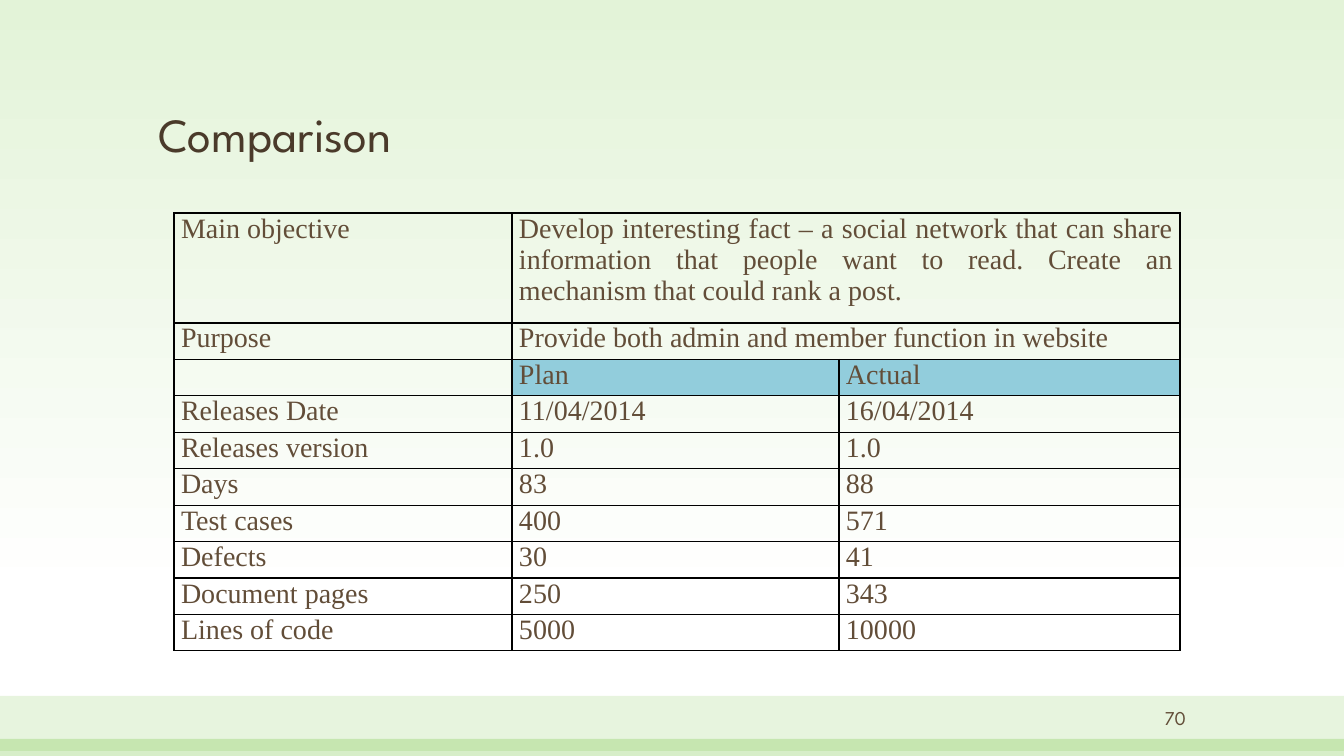
from lxml import etree
from pptx import Presentation
from pptx.dml.color import RGBColor
from pptx.enum.shapes import MSO_SHAPE
from pptx.enum.text import MSO_ANCHOR, PP_ALIGN
from pptx.oxml import parse_xml
from pptx.oxml.ns import nsdecls, qn
from pptx.util import Pt

RECTANGLE = MSO_SHAPE.RECTANGLE
LEFT, RIGHT, JUSTIFY = PP_ALIGN.LEFT, PP_ALIGN.RIGHT, PP_ALIGN.JUSTIFY
MIDDLE, BOTTOM = MSO_ANCHOR.MIDDLE, MSO_ANCHOR.BOTTOM
TITLE_ONLY = 5
SLIDE_WIDTH, SLIDE_HEIGHT = 1344, 756
SCALE = 12192000 / SLIDE_WIDTH

COLORS = {
    "sky": "E3F3D8",
    "white": "FFFFFF",
    "green": "72C23C",
    "title": "4A3A2A",
    "text": "624D38",
    "heading": "92CDDC",
    "border": "000000",
}
HEADING_FONT = "League Spartan"
TABLE_FONT = "Times New Roman"

COLUMN_WIDTHS = [338, 327, 341]
FIRST_ROW_HEIGHT, OTHER_ROWS_HEIGHT = 110, 328
HEADING_ROW = 2
ROWS = [
    ["Main objective", "Develop interesting fact – a social network that can share "
     "information that people want to read. Create an mechanism that could rank a post."],
    ["Purpose", "Provide both admin and member function in website"],
    ["", "Plan", "Actual"],
    ["Releases Date", "11/04/2014", "16/04/2014"],
    ["Releases version", "1.0", "1.0"],
    ["Days", "83", "88"],
    ["Test cases", "400", "571"],
    ["Defects", "30", "41"],
    ["Document pages", "250", "343"],
    ["Lines of code", "5000", "10000"],
]


def emu(pixels):
    return round(pixels * SCALE)


def color(name):
    return RGBColor.from_string(COLORS[name])


def write(frame, text, *, size, font, ink, align=LEFT, spacing=None):
    paragraph = frame.paragraphs[0]
    paragraph.alignment = align
    paragraph.line_spacing = spacing
    run = paragraph.add_run()
    run.text = text
    run.font.size = Pt(size)
    run.font.name = font
    run.font.color.rgb = color(ink)


class SlideBuilder:
    def __init__(self, presentation):
        self.slide = presentation.slides.add_slide(presentation.slide_layouts[TITLE_ONLY])

    def background(self, top, bottom, end):
        fill = self.slide.background.fill
        fill.gradient()
        fill.gradient_angle = 270
        for stop, name, position in zip(fill.gradient_stops, (top, bottom), (0, end)):
            stop.color.rgb = color(name)
            stop.position = position

    def band(self, top, height, opacity):
        shape = self.slide.shapes.add_shape(
            RECTANGLE, 0, emu(top), emu(SLIDE_WIDTH), emu(height))
        shape.shadow.inherit = False
        shape.line.fill.background()
        shape.fill.solid()
        shape.fill.fore_color.rgb = color("green")
        tint = shape.fill._xPr.find(qn("a:solidFill"))[0]
        etree.SubElement(tint, qn("a:alpha"), val=str(opacity * 1000))

    def title(self, text, left, top, width, height):
        shape = self.slide.shapes.title
        shape.left, shape.top = emu(left), emu(top)
        shape.width, shape.height = emu(width), emu(height)
        shape.text_frame.vertical_anchor = BOTTOM
        write(shape.text_frame, text, size=34, font=HEADING_FONT, ink="title", spacing=0.9)

    def page_number(self, text, left, top, width, height):
        shape = self.slide.shapes.add_textbox(emu(left), emu(top), emu(width), emu(height))
        frame = shape.text_frame
        frame.word_wrap = True
        frame.vertical_anchor = MIDDLE
        write(frame, text, size=14, font=HEADING_FONT, ink="text", align=RIGHT)

    def cell(self, cell, text, align, fill):
        cell.margin_left = cell.margin_right = emu(7)
        cell.margin_top = cell.margin_bottom = 0
        properties = cell._tc.get_or_add_tcPr()
        for side in ("lnL", "lnR", "lnT", "lnB"):
            properties.append(parse_xml(
                f'<a:{side} {nsdecls("a")} w="{Pt(1)}"><a:solidFill>'
                f'<a:srgbClr val="{COLORS["border"]}"/></a:solidFill></a:{side}>'))
        if fill:
            cell.fill.solid()
            cell.fill.fore_color.rgb = color(fill)
        else:
            cell.fill.background()
        if text:
            write(cell.text_frame, text, size=20, font=TABLE_FONT, ink="text", align=align)

    def table(self, rows, left, top):
        height = FIRST_ROW_HEIGHT + OTHER_ROWS_HEIGHT
        table = self.slide.shapes.add_table(
            len(rows), len(COLUMN_WIDTHS), emu(left), emu(top),
            emu(sum(COLUMN_WIDTHS)), emu(height)).table
        table.first_row = table.horz_banding = False
        for column, width in zip(table.columns, COLUMN_WIDTHS):
            column.width = emu(width)
        for row_index, texts in enumerate(rows):
            table.rows[row_index].height = emu(
                OTHER_ROWS_HEIGHT / (len(rows) - 1) if row_index else FIRST_ROW_HEIGHT)
            if len(texts) == 2:
                table.cell(row_index, 1).merge(table.cell(row_index, 2))
            for column_index in range(len(COLUMN_WIDTHS)):
                text = texts[column_index] if column_index < len(texts) else ""
                is_label = column_index == 0 and row_index > HEADING_ROW
                is_heading = column_index > 0 and row_index == HEADING_ROW
                self.cell(table.cell(row_index, column_index), text,
                          LEFT if is_label else JUSTIFY,
                          "heading" if is_heading else None)


def main():
    presentation = Presentation()
    presentation.slide_width = emu(SLIDE_WIDTH)
    presentation.slide_height = emu(SLIDE_HEIGHT)
    builder = SlideBuilder(presentation)
    builder.background("sky", "white", 0.79)
    builder.band(696, 55, 17)
    builder.band(739, 17, 28)
    builder.title("Comparison", 148, 48, 1048, 120)
    builder.page_number("70", 1126, 705, 70, 26)
    builder.table(ROWS, 174, 213)
    presentation.save("out.pptx")


if __name__ == "__main__":
    main()
